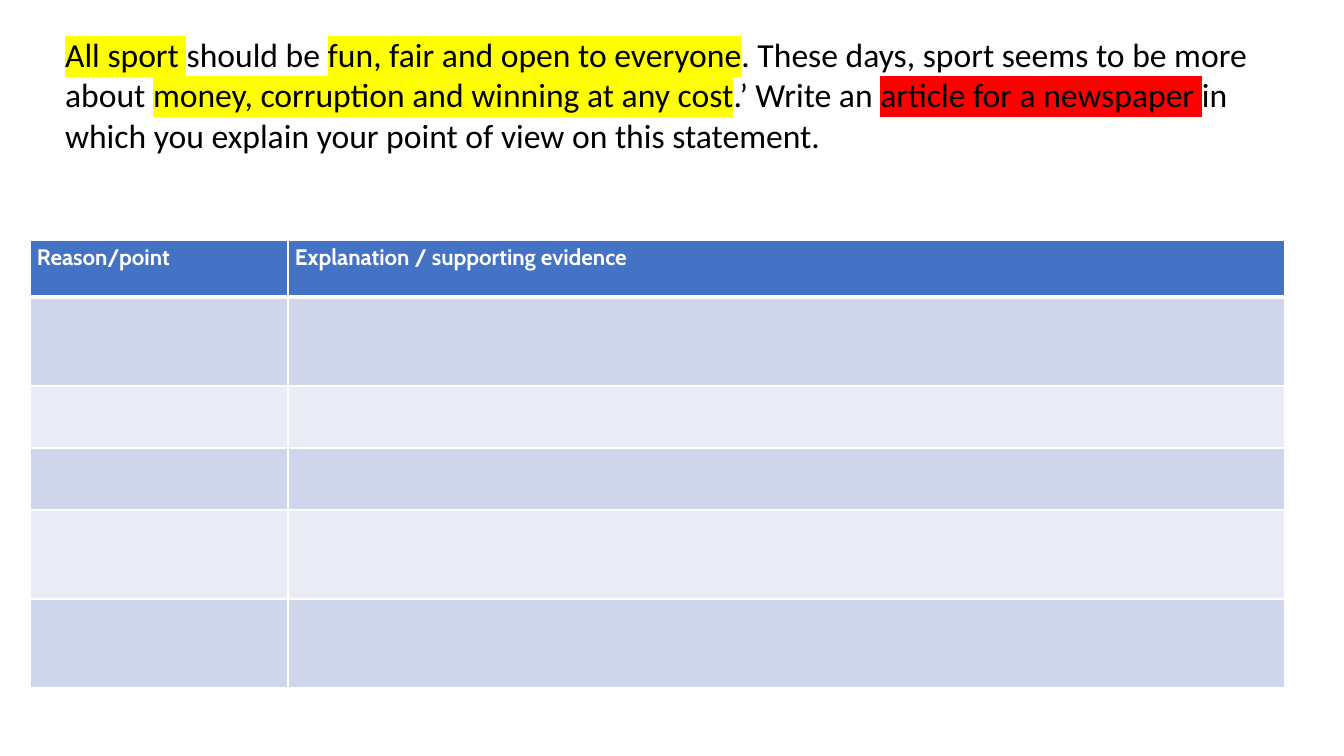
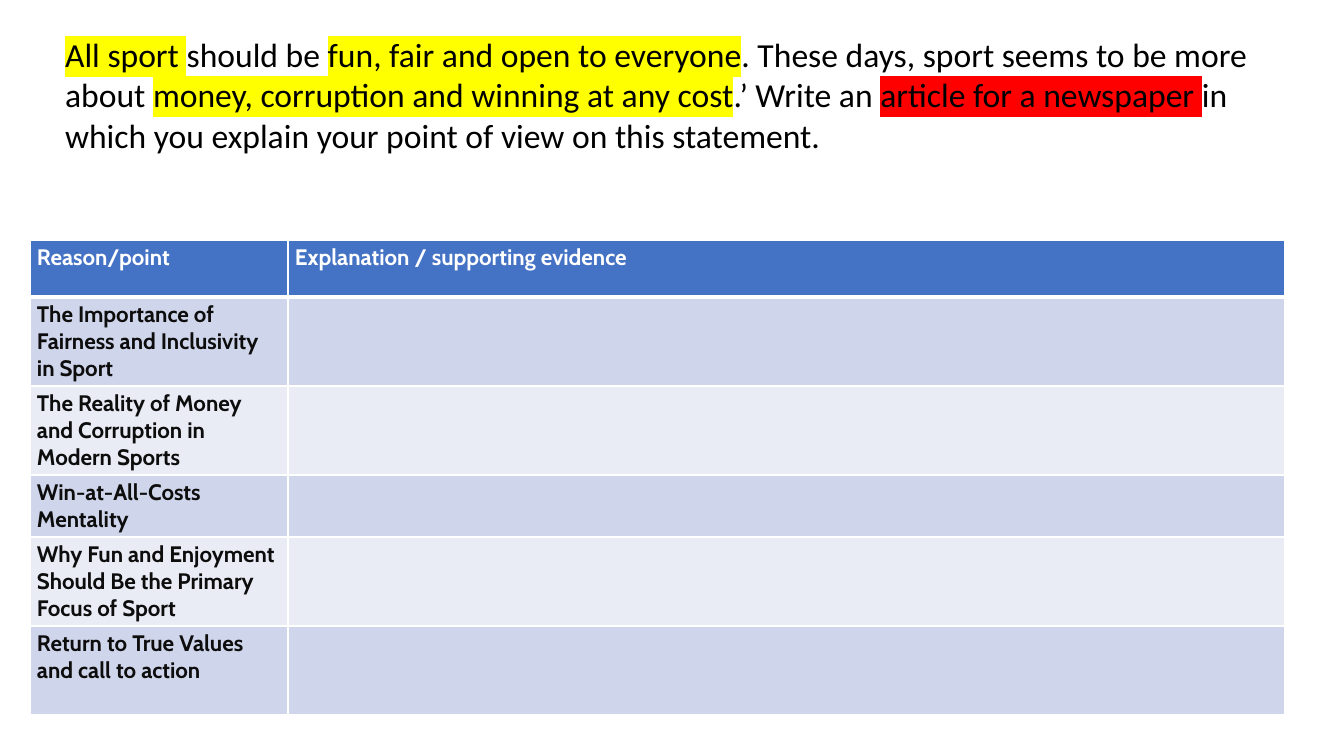
from dataclasses import dataclass

from lxml import etree
from pptx import Presentation
from pptx import util as u
from pptx.dml.color import RGBColor
from pptx.enum import text
from pptx.oxml import ns

PX = 914400 / 100.8


@dataclass(frozen=True)
class Theme:
    statement_font: str = "Calibri"
    table_font: str = "Cabin"
    statement_size: int = 24
    table_size: int = 16
    statement_ink: str = "000000"
    header_ink: str = "FFFFFF"
    body_ink: str = "0D0D0D"
    header_fill: str = "4472C4"
    bands: tuple = ("CFD5EA", "E9EBF5")
    border: str = "FFFFFF"
    key_idea: str = "FFFF00"
    task: str = "FF0000"


THEME = Theme()

STATEMENT = [
    ("All sport ", THEME.key_idea),
    ("should be ", None),
    ("fun, fair and open to everyone", THEME.key_idea),
    (". These days, sport seems to be more about ", None),
    ("money, corruption and winning at any cost", THEME.key_idea),
    (".’ Write an ", None),
    ("article for a newspaper ", THEME.task),
    ("in which you explain your point of view on this statement.", None),
]
HEADINGS = ["Reason/point", "Explanation / supporting evidence"]
REASONS = [
    "The Importance of Fairness and Inclusivity in Sport",
    "The Reality of Money and Corruption in Modern Sports",
    "Win-at-All-Costs Mentality",
    "Why Fun and Enjoyment Should Be the Primary Focus of Sport",
    "Return to True Values and call to action",
]
COLUMN_WIDTHS = [258, 997]

# Reasons in the first column, and row heights with the header first
PLANS = [
    ([""] * len(REASONS), [57, 89, 62, 62, 89, 89]),
    (REASONS, [57, 89, 89, 62, 89, 89]),
]


def px(length):
    return u.Emu(round(length * PX))


def add_run(paragraph, words, font_name, size, ink, bold=False, highlight=None):
    run = paragraph.add_run()
    run.text = words
    run.font.size = u.Pt(size)
    run.font.bold = bold
    run.font.color.rgb = RGBColor.from_string(ink)
    if highlight:
        marker = etree.SubElement(run.font._element, ns.qn("a:highlight"))
        etree.SubElement(marker, ns.qn("a:srgbClr"), val=highlight)
    run.font.name = font_name


presentation = Presentation()
presentation.slide_width, presentation.slide_height = px(1344), px(756)
title_only = presentation.slide_layouts[5]

for reasons, row_heights in PLANS:
    slide = presentation.slides.add_slide(title_only)

    statement = slide.shapes.title
    statement.left, statement.top = px(55), px(29)
    statement.width, statement.height = px(1233), px(132)
    frame = statement.text_frame
    frame.word_wrap = True
    frame.auto_size = text.MSO_AUTO_SIZE.SHAPE_TO_FIT_TEXT
    frame.vertical_anchor = text.MSO_ANCHOR.TOP
    paragraph = frame.paragraphs[0]
    paragraph.alignment = text.PP_ALIGN.LEFT
    for words, highlight in STATEMENT:
        add_run(paragraph, words, THEME.statement_font, THEME.statement_size,
                THEME.statement_ink, highlight=highlight)

    rows = [HEADINGS] + [[reason, ""] for reason in reasons]
    table = slide.shapes.add_table(
        len(rows), len(HEADINGS), px(30), px(240),
        px(sum(COLUMN_WIDTHS)), px(sum(row_heights))).table
    for column, width in zip(table.columns, COLUMN_WIDTHS):
        column.width = px(width)

    for row_index, (row, height) in enumerate(zip(rows, row_heights)):
        table.rows[row_index].height = px(height)
        is_header = row_index == 0
        fill = THEME.header_fill if is_header else THEME.bands[(row_index - 1) % 2]
        ink = THEME.header_ink if is_header else THEME.body_ink
        border_points = {
            "lnL": 1,
            "lnR": 1,
            "lnT": 3 if row_index == 1 else 1,
            "lnB": 3 if is_header else 1,
        }
        for column_index, words in enumerate(row):
            cell = table.cell(row_index, column_index)
            cell.margin_left = cell.margin_right = px(7)
            cell.margin_top = cell.margin_bottom = px(4)
            properties = cell._tc.get_or_add_tcPr()
            for side, points in border_points.items():
                line = etree.SubElement(properties, ns.qn(f"a:{side}"), w=str(u.Pt(points)))
                solid = etree.SubElement(line, ns.qn("a:solidFill"))
                etree.SubElement(solid, ns.qn("a:srgbClr"), val=THEME.border)
            cell.fill.solid()
            cell.fill.fore_color.rgb = RGBColor.from_string(fill)
            if words:
                add_run(cell.text_frame.paragraphs[0], words, THEME.table_font,
                        THEME.table_size, ink, bold=True)

presentation.save("out.pptx")
